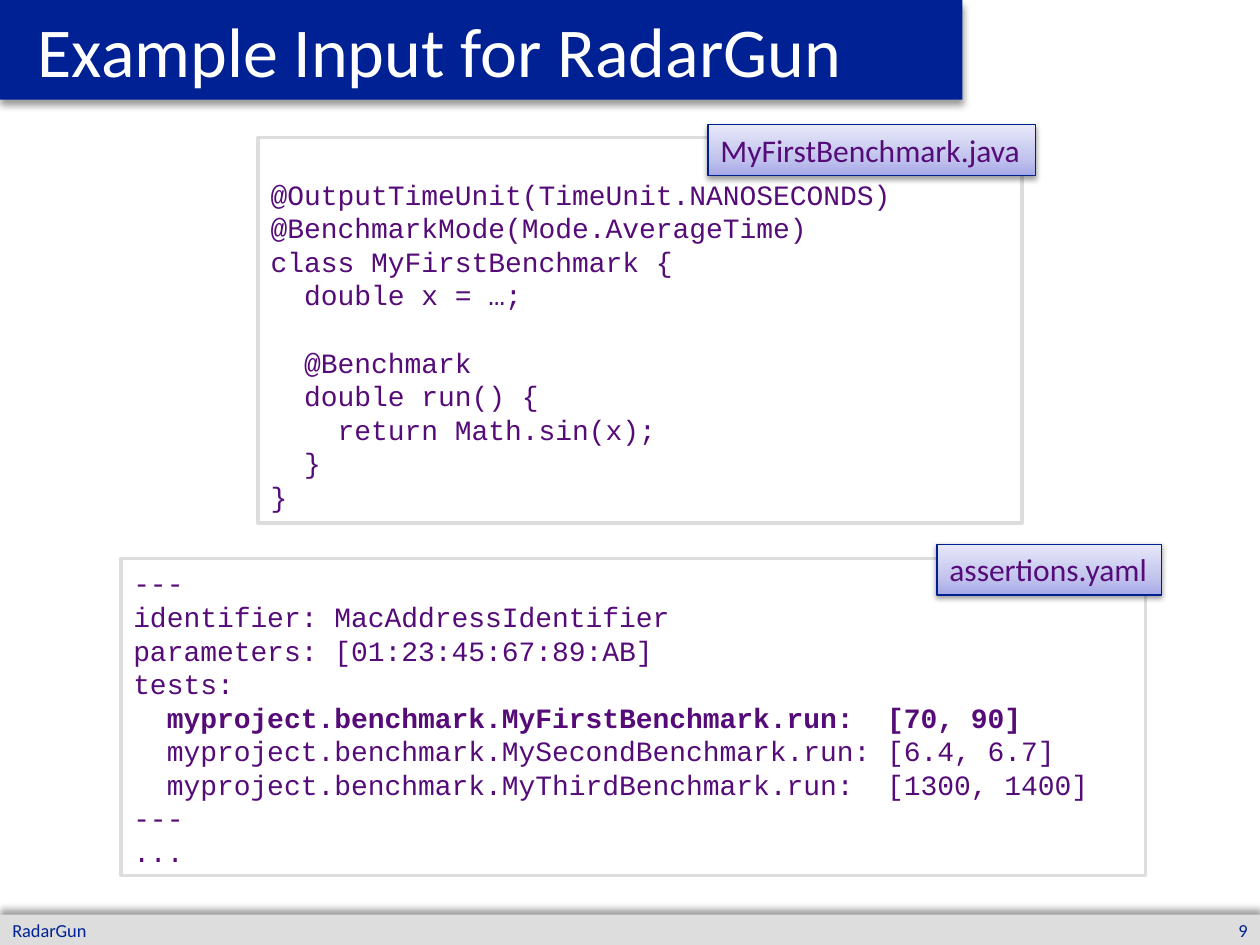
from lxml.etree import SubElement
from pptx import Presentation
from pptx.dml.color import RGBColor
from pptx.enum.shapes import MSO_SHAPE
from pptx.enum.text import MSO_ANCHOR, PP_ALIGN
from pptx.oxml.ns import qn
from pptx.util import Pt


def hue(code):
    return RGBColor.from_string(code)


def node(root, tag, **attrs):
    return SubElement(root, qn(tag), {key: str(val) for key, val in attrs.items()})


deck = Presentation()
deck.slide_width, deck.slide_height = Pt(720), Pt(540)
slide = deck.slides.add_slide(deck.slide_layouts[6])

java = """@OutputTimeUnit(TimeUnit.NANOSECONDS)
@BenchmarkMode(Mode.AverageTime)
class MyFirstBenchmark {
  double x = …;

  @Benchmark
  double run() {
    return Math.sin(x);
  }
}"""
yaml = """---
identifier: MacAddressIdentifier
parameters: [01:23:45:67:89:AB]
tests:
  myproject.benchmark.MyFirstBenchmark.run:  [70, 90]
  myproject.benchmark.MySecondBenchmark.run: [6.4, 6.7]
  myproject.benchmark.MyThirdBenchmark.run:  [1300, 1400]
---
..."""

pitch = 19.2
strong = "[70, 90]"
blend = [(0, "A7A9E8"), (35, "C2C4ED"), (100, "E7E8F9")]
top, mid = MSO_ANCHOR.TOP, MSO_ANCHOR.MIDDLE
left, right = PP_ALIGN.LEFT, PP_ALIGN.RIGHT

bands = [
    ((0, 0, 550, 56.9), "002193", 90),
    ((0, 522.7, 720, 17.3), "DDDDDD", 270),
]
labels = [
    ("Example Input for RadarGun", (0, 0, 550, 56.9), 40, "FFFFFF", 21.6, left),
    ("RadarGun", (0, 524.2, 521.3, 14.4), 10.5, "002193", 7.2, left),
    ("9", (663.1, 524.2, 56.9, 14.4), 10.5, "002193", 7.2, right),
]
panels = [
    (java, (147.6, 78.5, 436.3, 220.3), top, 3.6 + pitch,
     "MyFirstBenchmark.java", (404.6, 71.3, 187.2, 29.1)),
    (yaml, (69.1, 319, 585.4, 181.4), mid, 3.6,
     "assertions.yaml", (535.4, 311, 128.2, 29.1)),
]

parts = []
for place, fill, turn in bands:
    parts.append(dict(place=place, fill=fill, shade=(40, 4, 3, turn)))
for text, place, size, tint, pad, align in labels:
    parts.append(dict(place=place, text=text, size=size, tint=tint, pad=pad,
                      align=align, anchor=mid))
for code, place, anchor, inset, name, spot in panels:
    parts.append(dict(place=place, fill="FFFFFF", line=("DDDDDD", 2), text=code,
                      face="Courier New", size=16, anchor=anchor, inset=inset,
                      pitch=Pt(pitch)))
    parts.append(dict(place=spot, fill=blend, line=("002090", 0.75), text=name,
                      size=18, shade=(38, 3.1, 1.6, 90), wrap=False))

for part in parts:
    place = [Pt(num) for num in part["place"]]
    fill = part.get("fill")
    if fill:
        box = slide.shapes.add_shape(MSO_SHAPE.RECTANGLE, *place)
        box.shadow.inherit = False
        if isinstance(fill, str):
            box.fill.solid()
            box.fill.fore_color.rgb = hue(fill)
        else:
            box.fill.gradient()
            box.fill.gradient_angle = 90
            stops = box._element.spPr.find(".//" + qn("a:gsLst"))
            stops.clear()
            for pos, code in fill:
                node(node(stops, "a:gs", pos=pos * 1000), "a:srgbClr", val=code)
        if "line" in part:
            tint, width = part["line"]
            box.line.color.rgb = hue(tint)
            box.line.width = Pt(width)
        else:
            box.line.fill.background()
        if "shade" in part:
            alpha, blur, dist, turn = part["shade"]
            root = box._element.spPr.find(qn("a:effectLst"))
            cast = node(root, "a:outerShdw", blurRad=Pt(blur), dist=Pt(dist),
                        dir=turn * 60000, rotWithShape=0)
            node(node(cast, "a:srgbClr", val="000000"), "a:alpha", val=alpha * 1000)
    else:
        box = slide.shapes.add_textbox(*place)
    if "text" not in part:
        continue

    frame = box.text_frame
    pad = Pt(part.get("pad", 7.2))
    form = dict(word_wrap=part.get("wrap", True),
                vertical_anchor=part.get("anchor", top),
                margin_left=pad, margin_right=pad,
                margin_top=Pt(part.get("inset", 3.6)), margin_bottom=Pt(3.6))
    for key, val in form.items():
        setattr(frame, key, val)

    para, gap = frame.paragraphs[0], 0
    for row, line in enumerate(part["text"].split("\n")):
        if not line:
            gap = pitch
            continue
        if row:
            para = frame.add_paragraph()
        form = dict(alignment=part.get("align", left),
                    line_spacing=part.get("pitch"), space_before=Pt(gap))
        for key, val in form.items():
            setattr(para, key, val)
        gap = 0
        run = para.add_run()
        run.text = line
        form = dict(name=part.get("face", "Calibri"), size=Pt(part["size"]),
                    bold=strong in line)
        for key, val in form.items():
            setattr(run.font, key, val)
        run.font.color.rgb = hue(part.get("tint", "550C78"))

deck.save("out.pptx")
